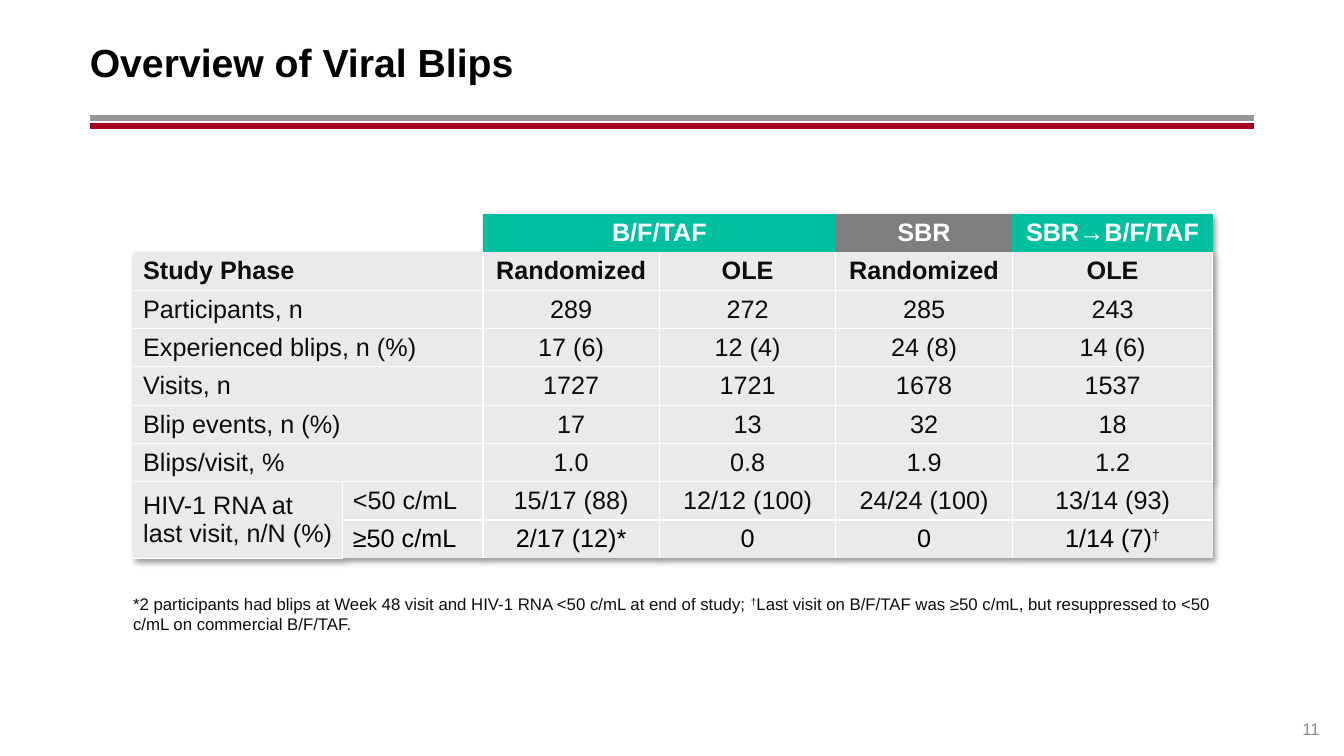
import pptx
import pptx.dml.color
import pptx.enum.shapes
import pptx.enum.text
import pptx.oxml
import pptx.oxml.ns
import pptx.util
from pptx.util import Inches

# Content
TITLE = "Overview of Viral Blips"
FOOTNOTE = ("*2 participants had blips at Week 48 visit and HIV-1 RNA <50 c/mL at end of study; "
            "†Last visit on B/F/TAF was ≥50 c/mL, but resuppressed to <50 c/mL on commercial B/F/TAF.")
PAGE_NUMBER = "11"
ROWS = [
    ["", "", "B/F/TAF", "", "SBR", "SBR→B/F/TAF"],
    ["Study Phase", "", "Randomized", "OLE", "Randomized", "OLE"],
    ["Participants, n", "", "289", "272", "285", "243"],
    ["Experienced blips, n (%)", "", "17 (6)", "12 (4)", "24 (8)", "14 (6)"],
    ["Visits, n", "", "1727", "1721", "1678", "1537"],
    ["Blip events, n (%)", "", "17", "13", "32", "18"],
    ["Blips/visit, %", "", "1.0", "0.8", "1.9", "1.2"],
    ["HIV-1 RNA at last visit, n/N (%)", "<50 c/mL",
     "15/17 (88)", "12/12 (100)", "24/24 (100)", "13/14 (93)"],
    ["", "≥50 c/mL", "2/17 (12)*", "0", "0", "1/14 (7)†"],
]
MERGES = [((row, 0), (row, 1)) for row in range(7)] + [((0, 2), (0, 3)), ((7, 0), (8, 0))]

# Style
FONT = "Arial"
TEAL, GRAY, PALE, WHITE, BLACK, INK = "00C0A0", "7F7F7F", "EAEAEA", "FFFFFF", "000000", "0D0D0D"
HEADER_FILLS = [None, None, TEAL, TEAL, GRAY, TEAL]
RULES = [(1.17, "969696"), (1.25, "A50021")]
LEFT, RIGHT = 0.89, 12.44
TABLE_LEFT, TABLE_TOP, TABLE_WIDTH = 1.32, 2.12, 10.7
COLUMN_WIDTHS = [2.08, 1.39, 1.75, 1.75, 1.75, 1.99]
ROW_HEIGHT = 0.38
PLAIN_TABLE_STYLE = "{2D5ABB26-0587-4C30-8999-92F81FD0307C}"
NAMESPACE = pptx.oxml.ns.nsdecls("a")
ALIGN = pptx.enum.text.PP_ALIGN
ANCHOR = pptx.enum.text.MSO_ANCHOR


def color(value):
    return pptx.dml.color.RGBColor.from_string(value)


def write(frame, text, size, text_color, bold=False, align=ALIGN.LEFT):
    """Write one paragraph, with each dagger raised in its own run."""
    paragraph = frame.paragraphs[0]
    paragraph.alignment = align
    for part in text.partition("†"):
        if part:
            run = paragraph.add_run()
            run.text = part
            run.font.name = FONT
            run.font.size = pptx.util.Pt(size)
            run.font.bold = bold
            run.font.color.rgb = color(text_color)
            if part == "†":
                run._r.get_or_add_rPr().set("baseline", "30000")
    return paragraph


def place(shape, left, top, width, height, anchor, vertical_inset=0):
    shape.left, shape.top = Inches(left), Inches(top)
    shape.width, shape.height = Inches(width), Inches(height)
    frame = shape.text_frame
    frame.word_wrap = True
    frame.auto_size = pptx.enum.text.MSO_AUTO_SIZE.NONE
    frame.vertical_anchor = anchor
    frame.margin_left = frame.margin_right = 0
    frame.margin_top = frame.margin_bottom = Inches(vertical_inset)
    return frame


def add_borders(cell, sides):
    properties = cell._tc.get_or_add_tcPr()
    for index, side in enumerate(sides):
        properties.insert(index, pptx.oxml.parse_xml(
            f'<a:ln{side} {NAMESPACE} w="12700"><a:solidFill>'
            f'<a:srgbClr val="{WHITE}"/></a:solidFill></a:ln{side}>'))


presentation = pptx.Presentation()
presentation.slide_width, presentation.slide_height = Inches(13.33), Inches(7.5)
slide = presentation.slides.add_slide(presentation.slide_layouts[1])

# Double rule under the title
for y, rule_color in RULES:
    rule = slide.shapes.add_connector(pptx.enum.shapes.MSO_CONNECTOR.STRAIGHT,
                                      Inches(LEFT), Inches(y), Inches(RIGHT), Inches(y))
    rule.line.color.rgb = color(rule_color)
    rule.line.width = pptx.util.Pt(4.25)
    rule._element.spPr.append(pptx.oxml.parse_xml(f"<a:effectLst {NAMESPACE}/>"))

# Title, footnote and page number
title_frame = place(slide.shapes.title, LEFT, 0.18, RIGHT - LEFT, 0.86, ANCHOR.MIDDLE, 0.05)
write(title_frame, TITLE, 28, BLACK, bold=True)

footnote_frame = place(slide.placeholders[1], TABLE_LEFT, 5.79, TABLE_WIDTH, 0.5, ANCHOR.BOTTOM)
footnote = write(footnote_frame, FOOTNOTE, 12, INK)
footnote.space_before = pptx.util.Pt(0)
footnote_properties = footnote._p.get_or_add_pPr()
footnote_properties.set("marL", "0")
footnote_properties.set("indent", "0")
footnote_properties.append(pptx.oxml.parse_xml(f"<a:buNone {NAMESPACE}/>"))

page_box = slide.shapes.add_textbox(0, 0, 0, 0)
page_frame = place(page_box, RIGHT, 6.93, 0.65, 0.4, ANCHOR.BOTTOM)
write(page_frame, PAGE_NUMBER, 12, "8C8C8C", align=ALIGN.RIGHT)

# Table frame with a soft shadow
last_row, last_column = len(ROWS) - 1, len(COLUMN_WIDTHS) - 1
table = slide.shapes.add_table(len(ROWS), len(COLUMN_WIDTHS), Inches(TABLE_LEFT), Inches(TABLE_TOP),
                               Inches(TABLE_WIDTH), Inches(ROW_HEIGHT * len(ROWS))).table
table.first_row = table.horz_banding = False
table_properties = table._tbl.tblPr
table_properties.find(pptx.oxml.ns.qn("a:tableStyleId")).text = PLAIN_TABLE_STYLE
table_properties.insert(0, pptx.oxml.parse_xml(
    f'<a:effectLst {NAMESPACE}><a:outerShdw blurRad="50800" dist="38100" dir="2700000" algn="tl">'
    f'<a:srgbClr val="{BLACK}"><a:alpha val="40000"/></a:srgbClr></a:outerShdw></a:effectLst>'))
for column, width in zip(table.columns, COLUMN_WIDTHS):
    column.width = Inches(width)
for row in table.rows:
    row.height = Inches(ROW_HEIGHT)
for start, end in MERGES:
    table.cell(*start).merge(table.cell(*end))

# Table cells
for row_index, texts in enumerate(ROWS):
    for column_index, text in enumerate(texts):
        cell = table.cell(row_index, column_index)
        cell.vertical_anchor = ANCHOR.MIDDLE
        cell.margin_top = cell.margin_bottom = Inches(0.03)
        is_header = row_index == 0
        fill_color = HEADER_FILLS[column_index] if is_header else PALE
        if fill_color:
            cell.fill.solid()
            cell.fill.fore_color.rgb = color(fill_color)
        else:
            cell.fill.background()
        if not is_header:
            inner_sides = {"L": column_index > 0, "R": column_index < last_column,
                           "T": row_index > 1, "B": row_index < last_row}
            add_borders(cell, [side for side, inner in inner_sides.items() if inner])
        if text:
            text_color = WHITE if is_header else BLACK if row_index == last_row else INK
            write(cell.text_frame, text, 18, text_color, bold=row_index < 2,
                  align=ALIGN.CENTER if column_index > 1 else ALIGN.LEFT)

presentation.save("out.pptx")
